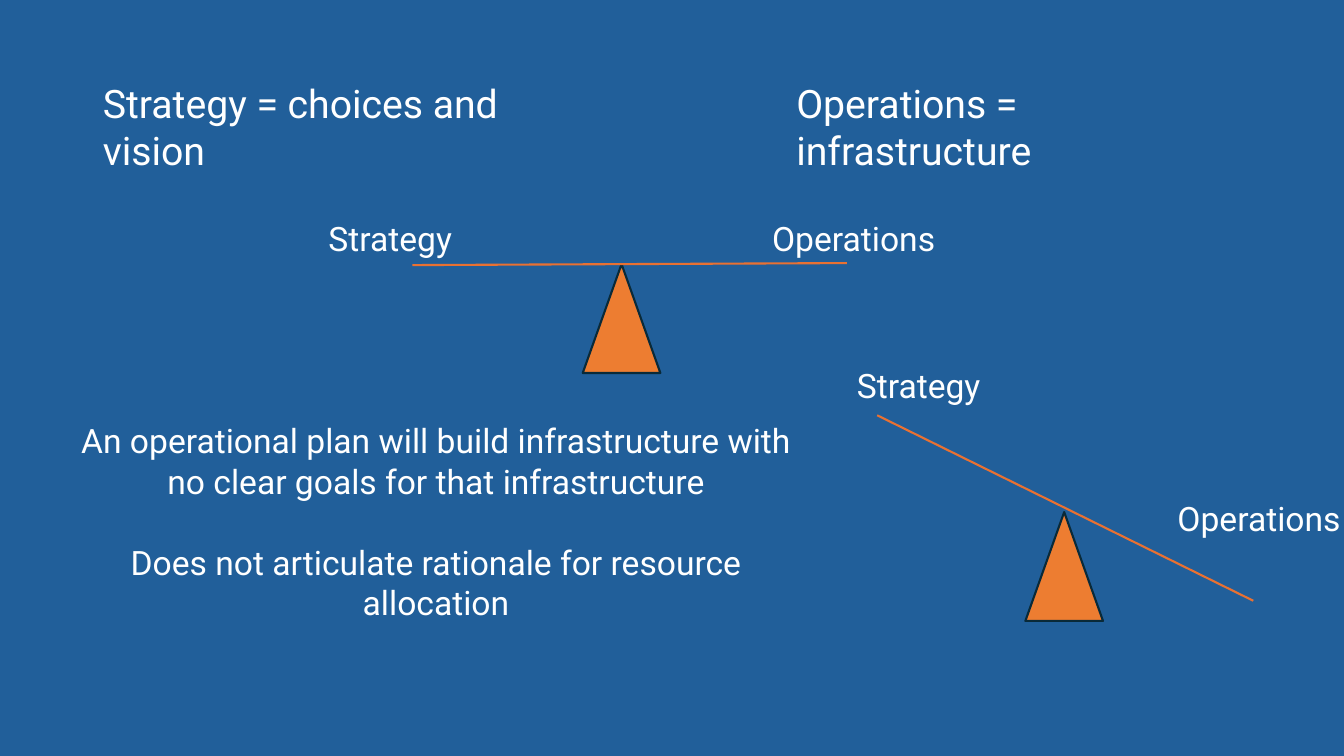
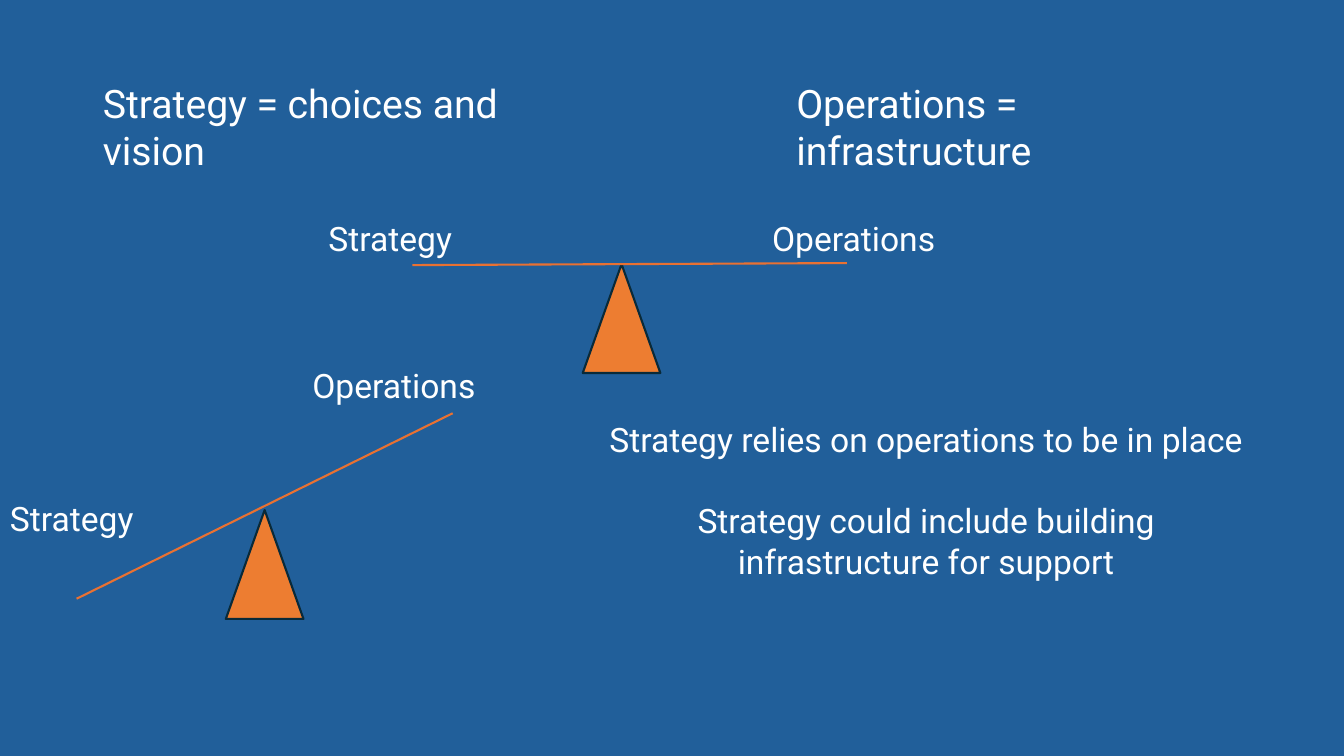
from dataclasses import dataclass

import pptx
import pptx.dml.color
import pptx.enum.shapes
import pptx.enum.text
import pptx.oxml
import pptx.util
from pptx.util import Inches

COLORS = {
    "background": "215F9A",
    "text": "FFFFFF",
    "fulcrum": "ED7D31",
    "outline": "092A39",
    "beam": "E97132",
}
FONT = "Roboto"
HEADING_SIZE = 28
BODY_SIZE = 24
PARAGRAPH_GAP = 29
LINE_WIDTH = 1.5
SLIDE_WIDTH, SLIDE_HEIGHT = 13.33, 7.5
HEADING_TOP, HEADING_HEIGHT = 0.74, 0.57
LABEL_WIDTH, LABEL_HEIGHT = 3, 0.5
FULCRUM_WIDTH, FULCRUM_HEIGHT = 0.77, 1.08
TITLE_ONLY = 5


@dataclass(frozen=True)
class Label:
    text: str
    left: float
    top: float


@dataclass(frozen=True)
class Seesaw:
    fulcrum: tuple[float, float]
    beam_start: tuple[float, float]
    beam_end: tuple[float, float]
    labels: tuple[Label, Label]


@dataclass(frozen=True)
class Message:
    """Body text: a gap separates the statements, each made of one or more lines."""
    left: float
    top: float
    width: float
    height: float
    statements: tuple[tuple[str, ...], ...]


BALANCED = Seesaw(
    (5.78, 2.62), (4.09, 2.63), (8.4, 2.61),
    (Label("Strategy", 3.16, 2.11), Label("Operations", 7.56, 2.11)),
)
OPERATIONS_HEAVY = Seesaw(
    (10.17, 5.08), (12.43, 5.96), (8.7, 4.12),
    (Label("Operations", 11.58, 4.89), Label("Strategy", 8.4, 3.57)),
)
STRATEGY_HEAVY = Seesaw(
    (2.24, 5.06), (0.76, 5.94), (4.49, 4.1),
    (Label("Strategy", 0, 4.89), Label("Operations", 3, 3.57)),
)
PAGES = (
    (OPERATIONS_HEAVY, Message(0.51, 4.12, 7.63, 1.72, (
        ("An operational plan will build infrastructure with no clear goals "
         "for that infrastructure",),
        ("Does not articulate rationale for resource allocation",),
    ))),
    (STRATEGY_HEAVY, Message(5.37, 4.11, 7.63, 2.52, (
        ("Strategy relies on operations to be in place",),
        ("Strategy could include building", "infrastructure for support"),
    ))),
)


def rgb(name: str) -> pptx.dml.color.RGBColor:
    return pptx.dml.color.RGBColor.from_string(COLORS[name])


def place(box, left: float, top: float, width: float, height: float) -> None:
    box.left, box.top = Inches(left), Inches(top)
    box.width, box.height = Inches(width), Inches(height)


def prepare_frame(box):
    """Make the text wrap and start at the top of a box of fixed size."""
    frame = box.text_frame
    frame.word_wrap = True
    frame.auto_size = pptx.enum.text.MSO_AUTO_SIZE.NONE
    frame.vertical_anchor = pptx.enum.text.MSO_ANCHOR.TOP
    return frame


def add_text(para, text: str, size: float,
             align=pptx.enum.text.PP_ALIGN.LEFT) -> None:
    para.alignment = align
    span = para.add_run()
    span.text = text
    span.font.name = FONT
    span.font.size = pptx.util.Pt(size)
    span.font.color.rgb = rgb("text")


def add_box(page, left: float, top: float, width: float, height: float):
    return page.shapes.add_textbox(
        Inches(left), Inches(top), Inches(width), Inches(height))


def add_headings(page) -> None:
    title = page.shapes.title
    place(title, 0.92, HEADING_TOP, 5.08, HEADING_HEIGHT)
    right = add_box(page, 7.8, HEADING_TOP, 4.76, HEADING_HEIGHT)
    for box, text in ((title, "Strategy = choices and vision"),
                      (right, "Operations = infrastructure")):
        add_text(prepare_frame(box).paragraphs[0], text, HEADING_SIZE)


def add_label(page, label: Label) -> None:
    width = min(LABEL_WIDTH, SLIDE_WIDTH - label.left)
    box = add_box(page, label.left, label.top, width, LABEL_HEIGHT)
    frame = prepare_frame(box)
    frame.margin_right = 0
    add_text(frame.paragraphs[0], label.text, BODY_SIZE)


def add_seesaw(page, seesaw: Seesaw) -> None:
    left, top = seesaw.fulcrum
    fulcrum = page.shapes.add_shape(
        pptx.enum.shapes.MSO_SHAPE.ISOSCELES_TRIANGLE,
        Inches(left), Inches(top), Inches(FULCRUM_WIDTH), Inches(FULCRUM_HEIGHT))
    fulcrum.shadow.inherit = False
    fulcrum.fill.solid()
    fulcrum.fill.fore_color.rgb = rgb("fulcrum")
    fulcrum.line.color.rgb = rgb("outline")
    fulcrum.line.width = pptx.util.Pt(LINE_WIDTH)

    ends = (Inches(value) for value in seesaw.beam_start + seesaw.beam_end)
    beam = page.shapes.add_connector(pptx.enum.shapes.MSO_CONNECTOR.STRAIGHT, *ends)
    beam.line.color.rgb = rgb("beam")
    beam.line.width = pptx.util.Pt(LINE_WIDTH)
    no_shadow = pptx.oxml.parse_xml(
        '<a:effectLst xmlns:a="http://schemas.openxmlformats.org/drawingml/2006/main"/>')
    beam.element.spPr.append(no_shadow)

    for label in seesaw.labels:
        add_label(page, label)


def add_message(page, message: Message) -> None:
    box = add_box(page, message.left, message.top, message.width, message.height)
    frame = prepare_frame(box)
    para = frame.paragraphs[0]
    for number, lines in enumerate(message.statements):
        for row, line in enumerate(lines):
            if number or row:
                para = frame.add_paragraph()
            if number and not row:
                para.space_before = pptx.util.Pt(PARAGRAPH_GAP)
            add_text(para, line, BODY_SIZE, pptx.enum.text.PP_ALIGN.CENTER)


def main() -> None:
    deck = pptx.Presentation()
    deck.slide_width, deck.slide_height = Inches(SLIDE_WIDTH), Inches(SLIDE_HEIGHT)
    background = deck.slide_master.background.fill
    background.solid()
    background.fore_color.rgb = rgb("background")
    for tilted, message in PAGES:
        page = deck.slides.add_slide(deck.slide_layouts[TITLE_ONLY])
        add_headings(page)
        add_seesaw(page, BALANCED)
        add_seesaw(page, tilted)
        add_message(page, message)
    deck.save("out.pptx")


if __name__ == "__main__":
    main()
